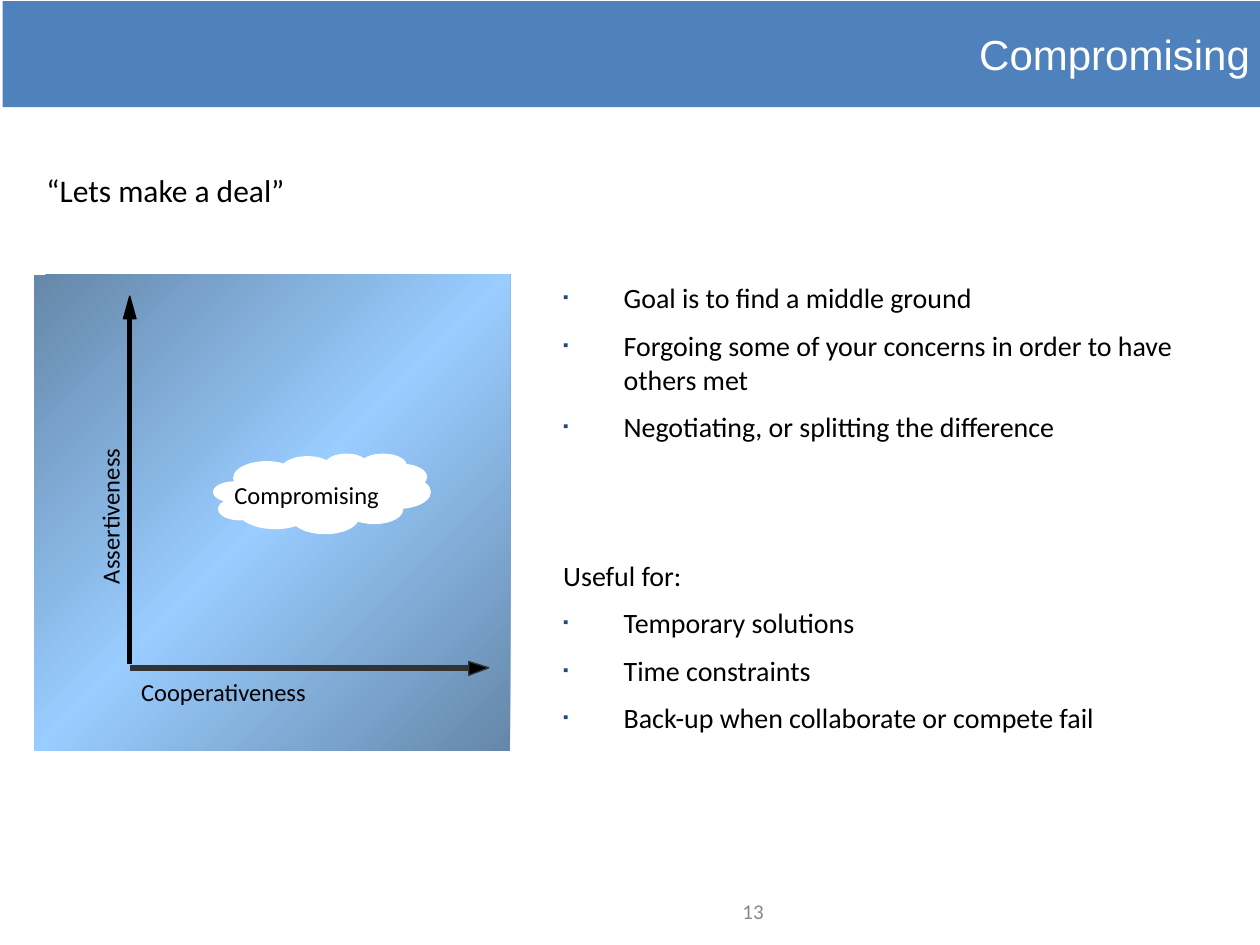
from copy import deepcopy

from lxml.etree import SubElement
from pptx import Presentation
from pptx.dml.color import RGBColor
from pptx.enum.shapes import MSO_CONNECTOR, MSO_SHAPE
from pptx.enum.text import MSO_ANCHOR, MSO_AUTO_SIZE, PP_ALIGN
from pptx.oxml.ns import qn
from pptx.util import Inches, Pt

BLACK, WHITE = "000000", "FFFFFF"
HANG = 0.48

# Cloud puffs and core, relative to the cloud's top left corner
PUFFS = [
    (0.54, 0.02, 0.42, 0.21), (0.89, 0, 0.34, 0.17), (1.2, 0.17, 0.53, 0.27),
    (0.19, 0.29, 0.61, 0.31), (1.05, 0.33, 0.46, 0.23), (0.04, 0.35, 0.34, 0.18),
    (0, 0.22, 0.34, 0.17), (0.16, 0.06, 0.53, 0.27), (0.62, 0.37, 0.54, 0.27),
    (1.28, 0.08, 0.42, 0.21), (1.16, 0, 0.38, 0.19),
]
CORE = [
    (0.6, 0.1), (0.67, 0.06), (0.94, 0.06), (1.14, 0.05), (1.39, 0.11), (1.52, 0.09),
    (1.58, 0.1), (1.6, 0.25), (1.64, 0.28), (1.52, 0.4), (1.4, 0.31), (1.36, 0.36),
    (1.19, 0.52), (0.59, 0.56), (0.29, 0.53), (0.19, 0.43), (0.19, 0.33), (0.14, 0.24),
]


def color(hex_code):
    return RGBColor.from_string(hex_code)


def place(shape, left, top, width, height):
    shape.left, shape.top = Inches(left), Inches(top)
    shape.width, shape.height = Inches(width), Inches(height)


def style(paragraph, size, hex_code=BLACK, name="Calibri"):
    font = paragraph.font
    font.size, font.name = Pt(size), name
    font.color.rgb = color(hex_code)


def paint(shape, fill, outline=None):
    shape.shadow.inherit = False
    shape.fill.solid()
    shape.fill.fore_color.rgb = color(fill)
    if outline:
        shape.line.color.rgb = color(outline)
        shape.line.width = Pt(0.75)
    else:
        shape.line.fill.background()


def add_text(shapes, text, box, size, hex_code=BLACK, inset=0.0, rotation=0):
    label = shapes.add_textbox(*map(Inches, box))
    label.rotation = rotation
    frame = label.text_frame
    frame.word_wrap = True
    frame.margin_left = frame.margin_right = Inches(inset)
    frame.margin_top = frame.margin_bottom = Inches(inset / 2)
    paragraph = frame.paragraphs[0]
    paragraph.text = text
    style(paragraph, size, hex_code)
    return frame


def add_polygon(shapes, points, fill, outline=None):
    corners = [(Inches(x), Inches(y)) for x, y in points]
    builder = shapes.build_freeform(*corners[0])
    builder.add_line_segments(corners[1:], close=True)
    paint(builder.convert_to_shape(), fill, outline)


def add_title_bar(title, box):
    place(title, *box)
    title.fill.solid()
    title.fill.fore_color.rgb = color("4F81BD")
    frame = title.text_frame
    frame.auto_size = MSO_AUTO_SIZE.NONE
    frame.vertical_anchor = MSO_ANCHOR.MIDDLE
    paragraph = frame.paragraphs[0]
    paragraph.text = "Compromising"
    paragraph.alignment = PP_ALIGN.RIGHT
    style(paragraph, 24, WHITE, "Arial")


def set_bullet(paragraph, bulleted):
    props = paragraph._p.get_or_add_pPr()
    hang = Inches(HANG) if bulleted else 0
    props.set("marL", str(hang))
    props.set("indent", str(-hang))
    if bulleted:
        tint = SubElement(props, qn("a:buClr"))
        SubElement(tint, qn("a:srgbClr"), val="1F497D")
        SubElement(props, qn("a:buSzPct"), val="55000")
        SubElement(props, qn("a:buFont"), typeface="Arial")
        SubElement(props, qn("a:buChar"), char="▪")
    else:
        SubElement(props, qn("a:buNone"))


def fill_list(body, box, points, heading=None):
    place(body, *box)
    frame = body.text_frame
    frame.auto_size = MSO_AUTO_SIZE.NONE
    lines = ([heading] if heading else []) + points
    for index, line in enumerate(lines):
        paragraph = frame.add_paragraph() if index else frame.paragraphs[0]
        paragraph.text = line
        paragraph.space_before = Pt(8 if index else 0)
        set_bullet(paragraph, line != heading)
        style(paragraph, 16)


def add_axis(shapes, start, end, head, line_color):
    axis = shapes.add_group_shape().shapes
    line = axis.add_connector(MSO_CONNECTOR.STRAIGHT, *map(Inches, start + end))
    line.line.color.rgb = color(line_color)
    line.line.width = Pt(3.13)
    SubElement(line._element.spPr, qn("a:effectLst"))
    add_polygon(axis, head, BLACK, line_color)


def add_cloud(shapes, left, top):
    cloud = shapes.add_group_shape().shapes
    for x, y, width, height in PUFFS:
        puff = cloud.add_shape(
            MSO_SHAPE.OVAL, *map(Inches, (left + x, top + y, width, height)))
        paint(puff, WHITE)
    add_polygon(cloud, [(left + x, top + y) for x, y in CORE], WHITE)
    add_text(shapes, "Compromising", (left + 0.17, top + 0.21, 1.37, 0.23), 14)


def add_conflict_grid(shapes, left, top, side):
    # Square with a diagonal light band
    square = shapes.add_shape(
        MSO_SHAPE.RECTANGLE, *map(Inches, (left, top, side, side)))
    square.shadow.inherit = False
    square.line.fill.background()
    square.fill.gradient()
    square.fill.gradient_angle = 315
    stops = square.fill.gradient_stops
    first = stops[0]._gs
    first.addnext(deepcopy(first))
    bands = [(0, "6587A9"), (0.5, "99CCFF"), (1, "6587A9")]
    for stop, (position, hex_code) in zip(square.fill.gradient_stops, bands):
        stop.position = position
        stop.color.rgb = color(hex_code)

    add_cloud(shapes, left + 1.42, top + 1.42)

    # Axes with their arrowheads
    x, y = left + 0.76, top + 3.12
    tip_x, tip_y = left + 3.61, top + 0.17
    add_axis(shapes, (x, y), (tip_x - 0.08, y),
             [(tip_x, y), (tip_x - 0.16, y - 0.05), (tip_x - 0.16, y + 0.06)], "333333")
    add_axis(shapes, (x, y - 0.03), (x, tip_y + 0.09),
             [(x, tip_y), (x - 0.05, tip_y + 0.18), (x + 0.05, tip_y + 0.18)], BLACK)

    # Axis names
    add_text(shapes, "Cooperativeness", (x + 0.09, y + 0.07, 1.56, 0.23), 14)
    add_text(shapes, "Assertiveness", (left - 0.2, top + 1.54, 1.6, 0.23), 14,
             rotation=270)


def main():
    deck = Presentation()
    deck.slide_width, deck.slide_height = Inches(10), Inches(7.5)
    slide = deck.slides.add_slide(deck.slide_layouts[3])
    shapes = slide.shapes
    _, goals, uses = slide.placeholders

    add_title_bar(shapes.title, (0.02, 0.01, 10, 0.84))
    add_conflict_grid(shapes, 0.27, 2.18, 3.78)
    fill_list(goals, (4.37, 2.18, 5.63, 1.44), [
        "Goal is to find a middle ground",
        "Forgoing some of your concerns in order to have others met",
        "Negotiating, or splitting the difference",
    ])
    fill_list(uses, (4.37, 4.38, 5.63, 1.57), [
        "Temporary solutions",
        "Time constraints",
        "Back-up when collaborate or compete fail",
    ], heading="Useful for:")

    # Motto and page number
    add_text(shapes, "“Lets make a deal”", (0.27, 1.31, 5.75, 0.4), 18, inset=0.1)
    page = add_text(shapes, "13", (3.83, 7.03, 2.33, 0.4), 12, "898989", inset=0.1)
    page.vertical_anchor = MSO_ANCHOR.MIDDLE
    page.paragraphs[0].alignment = PP_ALIGN.RIGHT

    deck.save("out.pptx")


if __name__ == "__main__":
    main()
